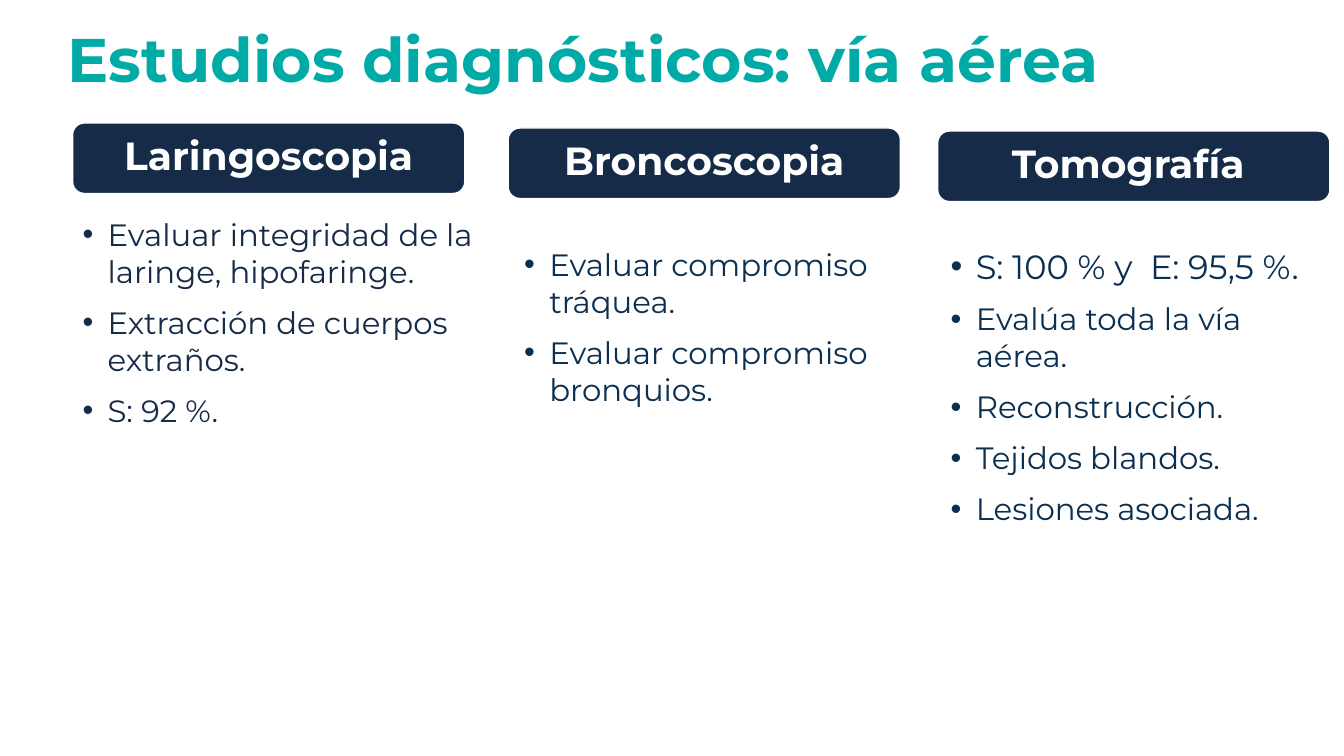
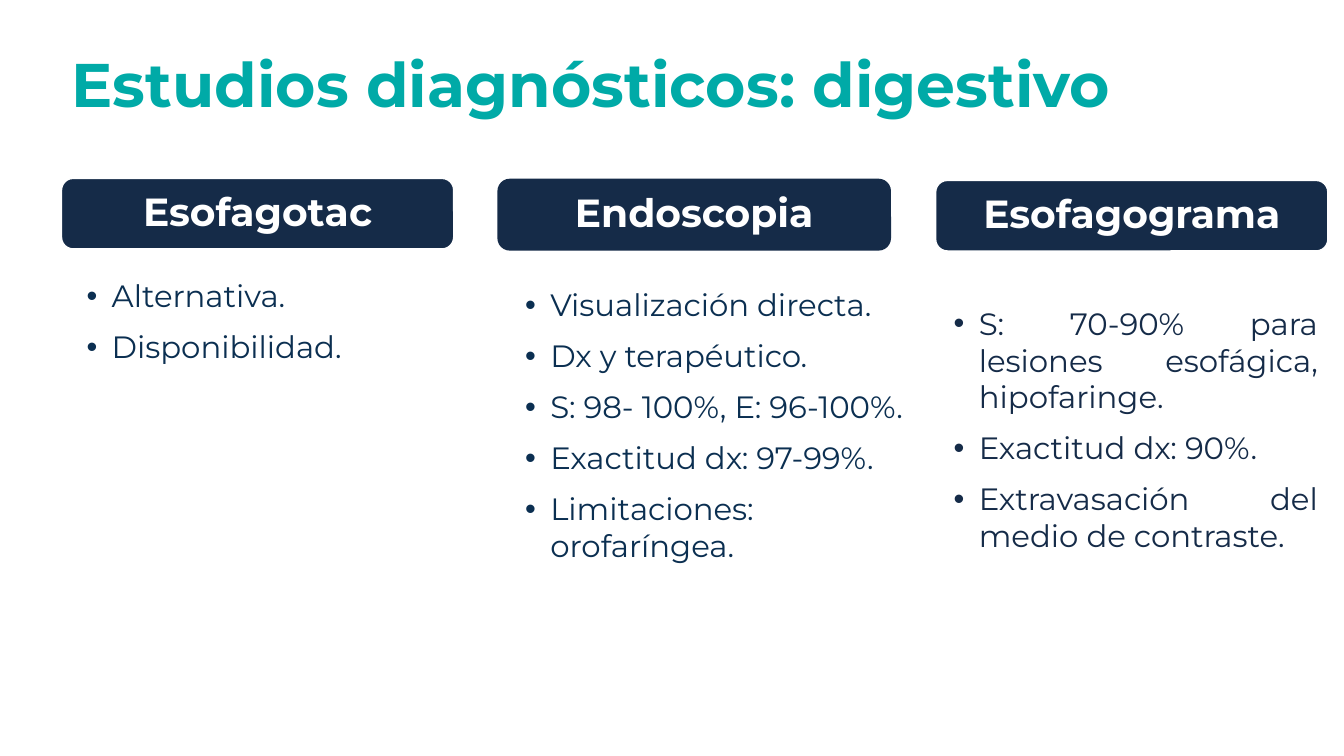
from dataclasses import dataclass

import lxml.etree
import pptx
import pptx.dml.color
import pptx.enum.shapes
import pptx.enum.text
import pptx.oxml.ns
import pptx.util

Inches = pptx.util.Inches
Pt = pptx.util.Pt
Align = pptx.enum.text.PP_ALIGN
Anchor = pptx.enum.text.MSO_ANCHOR


@dataclass(frozen=True)
class Theme:
    font: str = "Montserrat"
    teal: str = "00AAA7"
    navy: str = "152B48"
    blue: str = "0B2F51"
    white: str = "FFFFFF"
    title_size: int = 44
    heading_size: int = 28
    body_size: int = 22
    large_size: int = 24


THEME = Theme()
HEADING_SIZE = (3.89, 0.7)
BODY_HEIGHT = 3.14
BULLET_INDENT = 0.25

SLIDES = [
    {
        "title": "Estudios diagnósticos: vía aérea",
        "title_box": (0.57, 0.11, 11.5, 1.03),
        "columns": [
            {
                "heading": "Laringoscopia", "heading_at": (0.72, 1.22),
                "body_at": (0.72, 2.09), "body_width": 4.39, "color": THEME.navy,
                "items": ["Evaluar integridad de la laringe, hipofaringe.",
                          "Extracción de cuerpos extraños.", "S: 92 %."],
            },
            {
                "heading": "Broncoscopia", "heading_at": (5.04, 1.27),
                "body_at": (5.1, 2.39), "body_width": 3.81,
                "items": ["Evaluar compromiso tráquea.",
                          "Evaluar compromiso bronquios."],
            },
            {
                "heading": "Tomografía ", "heading_at": (9.3, 1.3),
                "body_at": (9.33, 2.39), "body_width": 3.81,
                "first_size": THEME.large_size,
                "items": ["S: 100 % y  E: 95,5 %.", "Evalúa toda la vía aérea.",
                          "Reconstrucción.", "Tejidos blandos.",
                          "Lesiones asociada."],
            },
        ],
    },
    {
        "title": "Estudios diagnósticos: digestivo",
        "title_box": (0.61, 0.21, 11.5, 1.31),
        "columns": [
            {
                "heading": "Esofagotac", "heading_at": (0.61, 1.77),
                "body_at": (0.76, 2.7), "body_width": 3.75,
                "items": ["Alternativa.", "Disponibilidad."],
            },
            {
                "heading": "Endoscopia", "heading_at": (4.94, 1.78),
                "body_at": (5.11, 2.79), "body_width": 4.04,
                "outline": THEME.navy,
                "items": ["Visualización directa.", "Dx y terapéutico.",
                          "S: 98- 100%, E: 96-100%.", "Exactitud dx: 97-99%.",
                          "Limitaciones: orofaríngea."],
            },
            {
                "heading": "Esofagograma", "heading_at": (9.28, 1.79),
                "body_at": (9.36, 2.97), "body_width": 3.81,
                "color": THEME.navy, "align": Align.JUSTIFY,
                "items": ["S: 70-90% para lesiones esofágica, hipofaringe.",
                          "Exactitud dx: 90%.",
                          "Extravasación del medio de contraste."],
            },
        ],
    },
]


def rgb(color):
    return pptx.dml.color.RGBColor.from_string(color)


def add_bullet(para):
    properties = para._p.get_or_add_pPr()
    properties.set("marL", str(Inches(BULLET_INDENT)))
    properties.set("indent", str(-Inches(BULLET_INDENT)))
    namespace = pptx.oxml.ns.qn
    lxml.etree.SubElement(properties, namespace("a:buFont")).set("typeface", "Arial")
    lxml.etree.SubElement(properties, namespace("a:buChar")).set("char", "•")


def write(frame, lines, size, color, bold=False, align=Align.LEFT,
          anchor=Anchor.TOP, line_spacing=1.0, gap=0, bullet=False,
          first_size=None):
    frame.word_wrap = True
    frame.auto_size = pptx.enum.text.MSO_AUTO_SIZE.NONE
    frame.vertical_anchor = anchor
    for index, line in enumerate(lines):
        para = frame.add_paragraph() if index else frame.paragraphs[0]
        if bullet:
            add_bullet(para)
        para.alignment = align
        para.line_spacing = line_spacing
        para.space_before = Pt(gap if index else 0)
        span = para.add_run()
        span.text = line
        span.font.name = THEME.font
        span.font.size = Pt(first_size if first_size and not index else size)
        span.font.bold = bold
        span.font.color.rgb = rgb(color)


def add_title(page, text, box):
    title = page.shapes.title
    title.left, title.top, title.width, title.height = map(Inches, box)
    write(title.text_frame, [text], THEME.title_size, THEME.teal, bold=True,
          anchor=Anchor.MIDDLE, line_spacing=0.9)


def add_heading(page, column):
    band = page.shapes.add_shape(
        pptx.enum.shapes.MSO_SHAPE.ROUNDED_RECTANGLE,
        *map(Inches, column["heading_at"] + HEADING_SIZE))
    band.shadow.inherit = False
    band.fill.solid()
    band.fill.fore_color.rgb = rgb(THEME.navy)
    band.line.color.rgb = rgb(column.get("outline", THEME.white))
    band.line.width = Pt(1)
    write(band.text_frame, [column["heading"]], THEME.heading_size, THEME.white,
          bold=True, align=Align.CENTER, anchor=Anchor.MIDDLE, line_spacing=0.9)


def add_body(page, column):
    size = (column["body_width"], BODY_HEIGHT)
    box = page.shapes.add_textbox(*map(Inches, column["body_at"] + size))
    write(box.text_frame, column["items"], THEME.body_size,
          column.get("color", THEME.blue), align=column.get("align", Align.LEFT),
          gap=10, bullet=True, first_size=column.get("first_size"))


def main():
    deck = pptx.Presentation()
    deck.slide_width, deck.slide_height = Inches(13.33), Inches(7.5)
    title_only = deck.slide_layouts[5]
    for content in SLIDES:
        page = deck.slides.add_slide(title_only)
        add_title(page, content["title"], content["title_box"])
        for column in content["columns"]:
            add_heading(page, column)
            add_body(page, column)
    deck.save("out.pptx")


if __name__ == "__main__":
    main()
